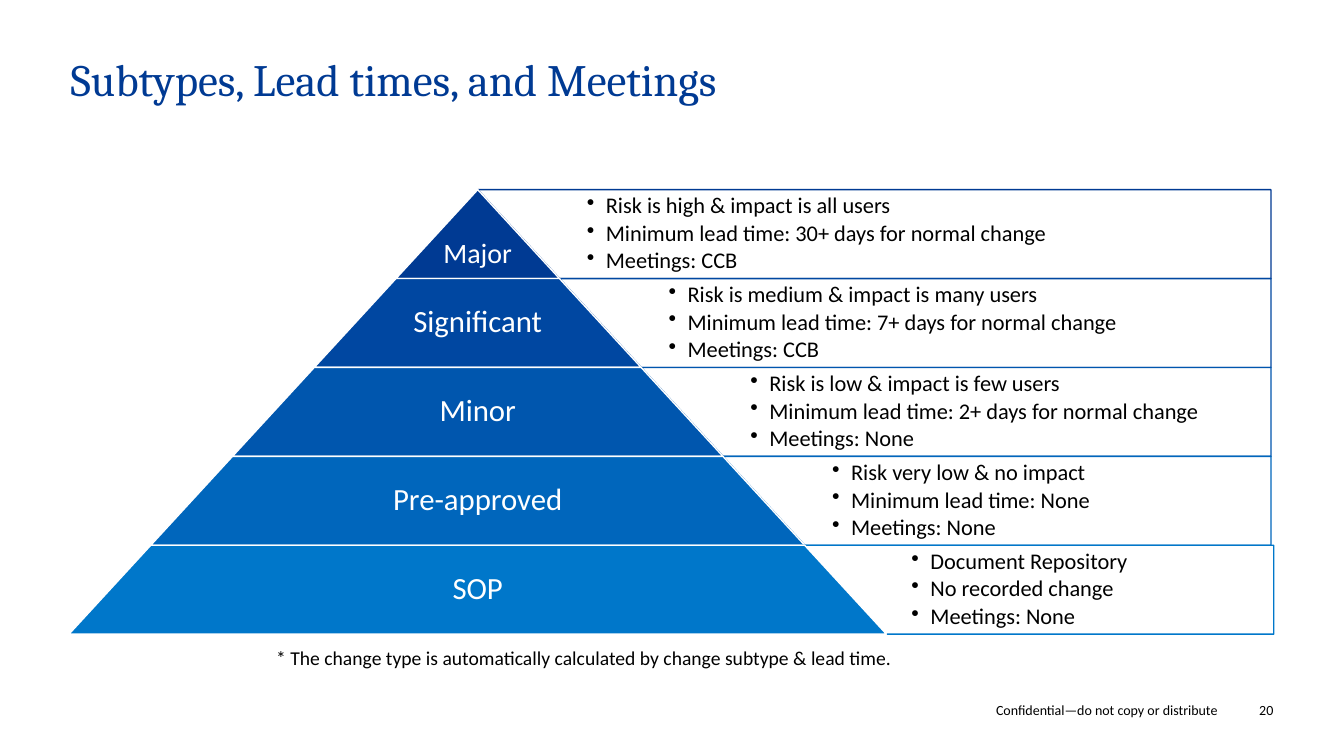
from lxml.etree import SubElement as Sub
from pptx import Presentation
from pptx.dml.color import RGBColor
from pptx.enum.shapes import MSO_SHAPE as Kind
from pptx.enum.text import MSO_ANCHOR as Anchor, PP_ALIGN as Align
from pptx.oxml.ns import qn
from pptx.util import Cm, Pt

NAVY = RGBColor(0x00, 0x3A, 0x93)
ROYAL = RGBColor(0x00, 0x47, 0xA1)
COBALT = RGBColor(0x00, 0x56, 0xAE)
AZURE = RGBColor(0x00, 0x66, 0xBC)
SKY = RGBColor(0x00, 0x77, 0xCA)
WHITE = RGBColor(0xFF, 0xFF, 0xFF)
BLACK = RGBColor(0x00, 0x00, 0x00)

TITLE = "Subtypes, Lead times, and Meetings"
NOTE = "* The change type is automatically calculated by change subtype & lead time."
LEGAL = "Confidential—do not copy or distribute"
PAGE = "20"
LEVELS = [
    ("Major", NAVY, ["Risk is high & impact is all users",
                     "Minimum lead time: 30+ days for normal change",
                     "Meetings: CCB"]),
    ("Significant", ROYAL, ["Risk is medium & impact is many users",
                            "Minimum lead time: 7+ days for normal change",
                            "Meetings: CCB"]),
    ("Minor", COBALT, ["Risk is low & impact is few users",
                       "Minimum lead time: 2+ days for normal change",
                       "Meetings: None"]),
    ("Pre-approved", AZURE, ["Risk very low & no impact",
                             "Minimum lead time: None",
                             "Meetings: None"]),
    ("SOP", SKY, ["Document Repository",
                  "No recorded change",
                  "Meetings: None"]),
]

APEX, TOP, RIGHT = 12.04, 4.78, 32.03
HIGH, STEP = 2.24, 2.06
SLOPE = 0.92
PAD = 0.69

deck = Presentation()
deck.slide_width, deck.slide_height = Cm(33.87), Cm(19.05)
slide = deck.slides.add_slide(deck.slide_layouts[6])


def write(text, box, size=16, font="Calibri", color=BLACK, align=Align.LEFT,
          anchor=Anchor.TOP, pad=(0, 0, 0, 0), line=1.0, after=0, bullet=False):
    frame = slide.shapes.add_textbox(*map(Cm, box)).text_frame
    frame.word_wrap = True
    frame.vertical_anchor = anchor
    (frame.margin_left, frame.margin_top,
     frame.margin_right, frame.margin_bottom) = map(Cm, pad)
    lines = [text] if isinstance(text, str) else text
    for i, words in enumerate(lines):
        para = frame.paragraphs[0] if i == 0 else frame.add_paragraph()
        if bullet:
            props = para._p.get_or_add_pPr()
            props.set("marL", str(Cm(0.48)))
            props.set("indent", str(-Cm(0.48)))
            Sub(props, qn("a:buChar"), char="•")
        para.alignment = align
        para.line_spacing = line
        para.space_after = Pt(after)
        run = para.add_run()
        run.text = words
        run.font.name, run.font.size = font, Pt(size)
        run.font.color.rgb = color


def draw(kind, box, fill, edge, bends, turn=0):
    shape = slide.shapes.add_shape(kind, *map(Cm, box))
    shape.shadow.inherit = False
    shape.rotation = turn
    for i, bend in enumerate(bends):
        shape.adjustments[i] = bend
    shape.fill.solid()
    shape.fill.fore_color.rgb = fill
    shape.line.color.rgb = edge
    shape.line.width = Pt(1)


write(TITLE, (1.78, 1.45, 30.28, 2.67), size=32, font="Cambria", color=NAVY, line=0.9)

for row, (name, color, facts) in enumerate(LEVELS):
    y = TOP + row * HIGH
    last = row == len(LEVELS) - 1
    left = APEX + row * STEP - (0.06 if last else 0)
    right = RIGHT + (0.07 if last else 0)
    inner = left + STEP
    half = (row + 1) * STEP
    layer = (APEX - half, y, 2 * half, HIGH)
    drop = 0.08 if row else 1.1
    draw(Kind.NON_ISOSCELES_TRAPEZOID, (left, y, right - left, HIGH),
         WHITE, color, [0, SLOPE], turn=180)
    write(facts, (inner, y, right - inner, HIGH), anchor=Anchor.MIDDLE,
          pad=(PAD, 0, PAD, 0), line=0.9, after=2.4, bullet=True)
    draw(Kind.TRAPEZOID, layer, color, WHITE, [SLOPE])
    write(name, layer, size=22 if row else 20, color=WHITE, align=Align.CENTER,
          anchor=Anchor.MIDDLE, pad=(0.08, drop, 0.08, 0.08), line=0.9)

write(NOTE, (6.83, 16.15, 20.19, 0.84), size=14, pad=[0.13] * 4)
write(LEGAL, (9.27, 17.68, 21.41, 0.43), size=10, align=Align.RIGHT, anchor=Anchor.BOTTOM)
write(PAGE, (31.12, 17.68, 0.97, 0.43), size=10, align=Align.RIGHT)

deck.save("out.pptx")
